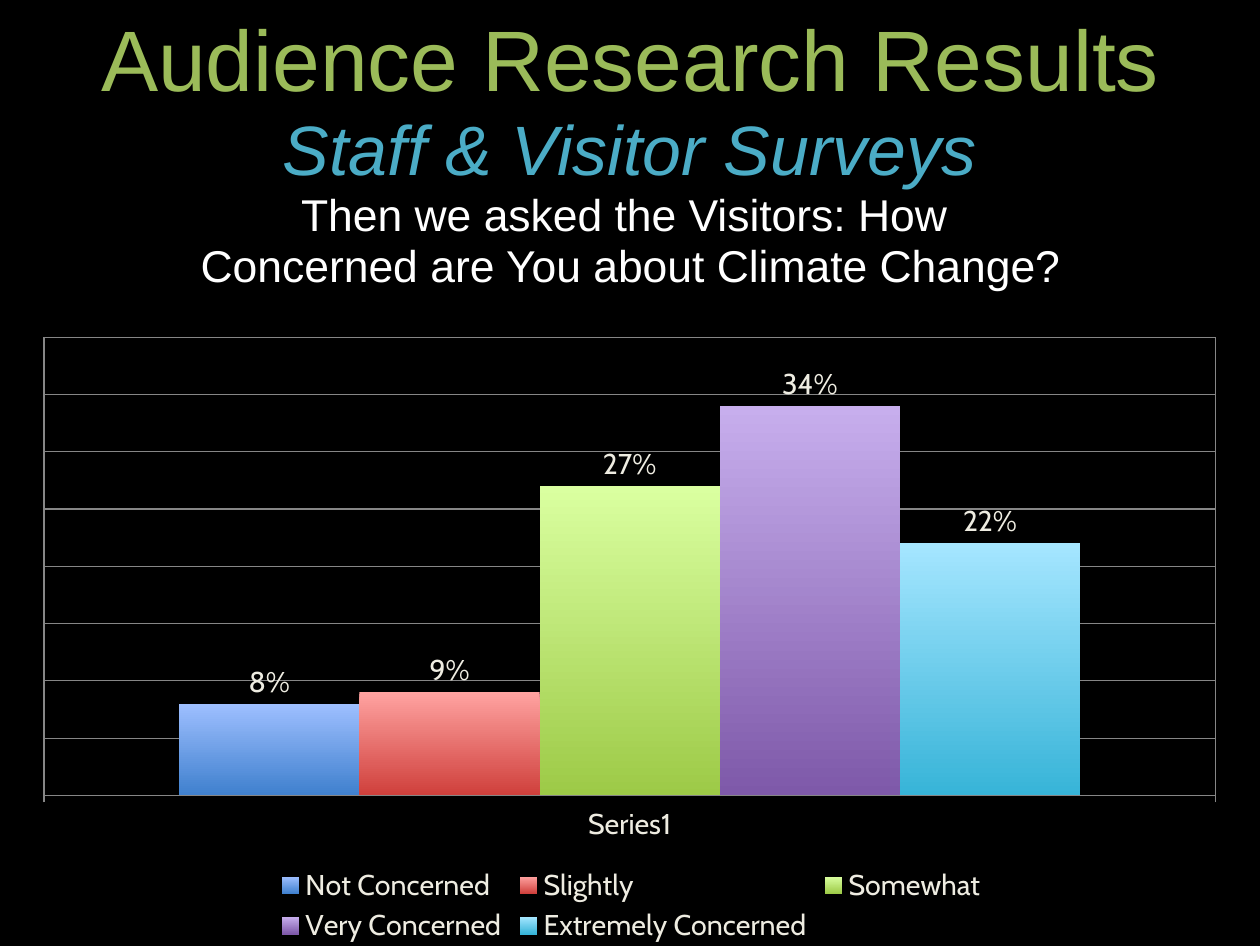
from lxml import etree
from pptx import Presentation
from pptx.chart.data import CategoryChartData
from pptx.dml.color import RGBColor
from pptx.enum.chart import (XL_CHART_TYPE, XL_LABEL_POSITION,
                             XL_LEGEND_POSITION, XL_TICK_LABEL_POSITION,
                             XL_TICK_MARK)
from pptx.enum.text import MSO_ANCHOR, PP_ALIGN
from pptx.oxml.ns import qn
from pptx.util import Inches, Pt

PX = 8000
COLUMNS = XL_CHART_TYPE.COLUMN_CLUSTERED
OUTSIDE = XL_LABEL_POSITION.OUTSIDE_END
BOTTOM = XL_LEGEND_POSITION.BOTTOM
LOW = XL_TICK_LABEL_POSITION.LOW
TICK_OUT = XL_TICK_MARK.OUTSIDE
MIDDLE = MSO_ANCHOR.MIDDLE
CENTER = PP_ALIGN.CENTER

COLORS = {
    "back": "000000", "title": "9BBB59", "sub": "4BACC6",
    "body": "FFFFFF", "label": "EEECE1", "grid": "868686",
}
LINES = [
    ("Audience Research Results", 54, "title", False),
    ("Staff & Visitor Surveys", 44, "sub", True),
    ("Then we asked the Visitors: How ", 28, "body", False),
    ("Concerned are You about Climate Change?", 28, "body", False),
]
# answer, share, top and bottom colour of the column
ANSWERS = [
    ("Not Concerned", 0.08, "9EBFFF", "3F80CE"),
    ("Slightly", 0.09, "FFA2A0", "CF403C"),
    ("Somewhat", 0.27, "DAFFA0", "9DCA47"),
    ("Very Concerned", 0.34, "C7AEED", "7E59A9"),
    ("Extremely Concerned", 0.22, "A5E6FF", "37B4D8"),
]
CHART = (21, 325, 1220, 623)
PLOT = (44, 337, 1171, 458)


def px(*sizes):
    return [size * PX for size in sizes]


def rgb(name):
    return RGBColor.from_string(COLORS.get(name, name))


def add_heading(slide, box, lines):
    frame = slide.shapes.add_textbox(*px(*box)).text_frame
    frame.word_wrap = True
    frame.vertical_anchor = MIDDLE
    frame.margin_left = frame.margin_right = frame.margin_top = 0
    frame.margin_bottom = 22 * PX
    for i, (text, size, color, slant) in enumerate(lines):
        para = frame.paragraphs[0] if i == 0 else frame.add_paragraph()
        para.alignment = CENTER
        para.line_spacing = 0.95
        run = para.add_run()
        run.text = text
        font = run.font
        font.name, font.size, font.italic = "Arial", Pt(size), slant
        font.color.rgb = rgb(color)


def set_line(line):
    line.color.rgb = rgb("grid")
    line.width = Pt(0.75)


def place_plot(chart):
    """Fix the inner plot area at PLOT, as fractions of the chart frame."""
    area = chart._chartSpace.chart.plotArea
    for old in area.findall(qn("c:layout")):
        area.remove(old)
    layout = etree.Element(qn("c:layout"))
    manual = etree.SubElement(layout, qn("c:manualLayout"))
    left, top, width, height = CHART
    parts = [
        ("layoutTarget", "inner"), ("xMode", "edge"), ("yMode", "edge"),
        ("x", (PLOT[0] - left) / width), ("y", (PLOT[1] - top) / height),
        ("w", PLOT[2] / width), ("h", PLOT[3] / height),
    ]
    for tag, value in parts:
        etree.SubElement(manual, qn("c:" + tag)).set("val", str(value))
    area.insert(0, layout)


def style_axes(chart):
    value = chart.value_axis
    value.minimum_scale, value.maximum_scale = 0, 0.4
    value.major_unit = 0.05
    value.tick_labels.number_format = "0%"
    value.tick_labels.number_format_is_linked = False
    value.visible = False
    cat = chart.category_axis
    cat.major_tick_mark = TICK_OUT
    cat.tick_label_position = LOW
    set_line(cat.format.line)
    for axis in (value, cat):
        axis.has_major_gridlines = True
        set_line(axis.major_gridlines.format.line)


def style_bar(bar, top, base):
    fill = bar.format.fill
    fill.gradient()
    fill.gradient_angle = 270
    for stop, color in zip(fill.gradient_stops, (top, base)):
        stop.color.rgb = rgb(color)
    bar.invert_if_negative = False
    labels = bar.data_labels
    labels.show_value = True
    labels.position = OUTSIDE
    labels.number_format = "0%"
    labels.number_format_is_linked = False
    labels.font.name, labels.font.size = "Cabin", Pt(18)
    labels.font.color.rgb = rgb("label")


def add_columns(slide, answers):
    data = CategoryChartData(number_format="0%")
    data.categories = ["Series1"]
    for name, share, _, _ in answers:
        data.add_series(name, [share])
    chart = slide.shapes.add_chart(COLUMNS, *px(*CHART), data).chart
    chart.has_title = False
    chart.font.name, chart.font.size = "Cabin", Pt(18)
    chart.font.color.rgb = rgb("label")
    chart.has_legend = True
    chart.legend.position = BOTTOM
    chart.legend.include_in_layout = False
    plot = chart.plots[0]
    plot.gap_width, plot.overlap = 150, 0
    plot.vary_by_categories = False
    for bar, (_, _, top, base) in zip(plot.series, answers):
        style_bar(bar, top, base)
    style_axes(chart)
    place_plot(chart)


def main():
    deck = Presentation()
    deck.slide_width, deck.slide_height = Inches(11.02), Inches(8.27)
    slide = deck.slides.add_slide(deck.slide_layouts[6])
    back = slide.background.fill
    back.solid()
    back.fore_color.rgb = rgb("back")
    add_heading(slide, (0, 13, 1260, 302), LINES)
    add_columns(slide, ANSWERS)
    deck.save("out.pptx")


if __name__ == "__main__":
    main()
